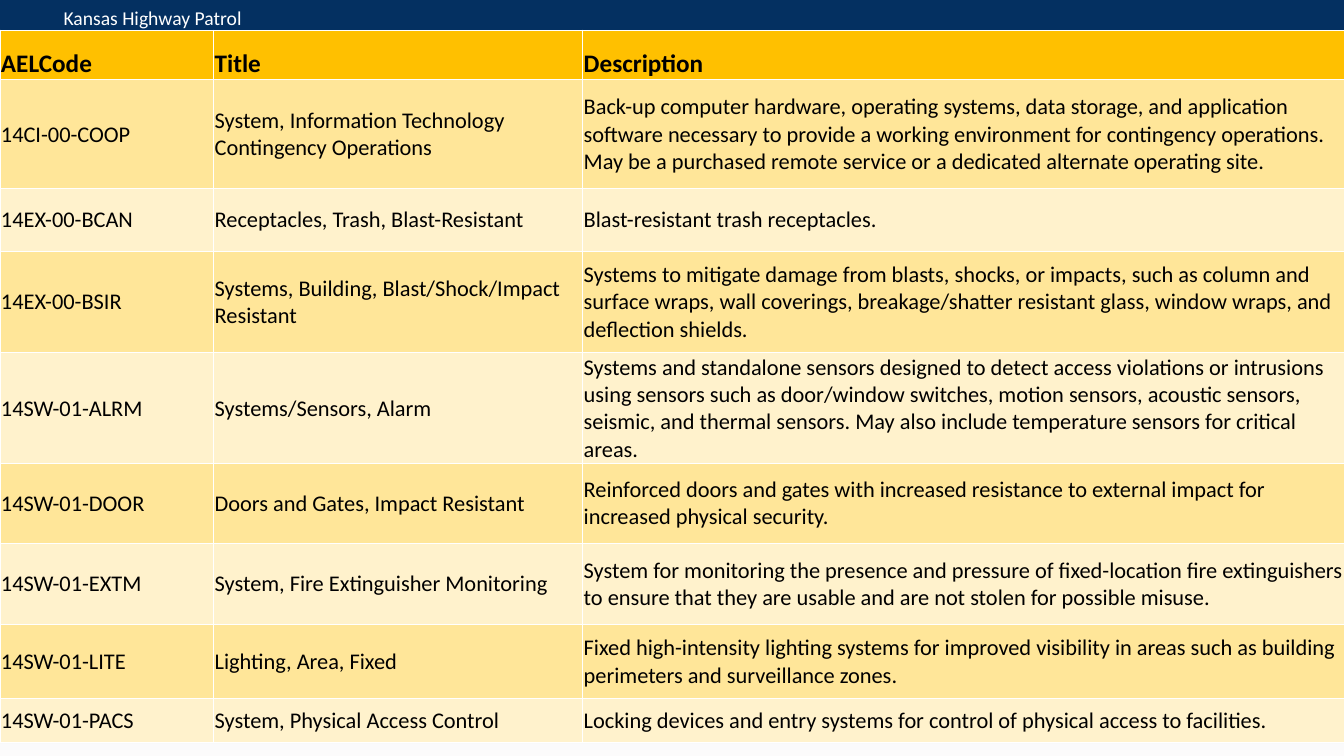
from lxml import etree
from pptx import Presentation
from pptx.dml.color import RGBColor
from pptx.enum.shapes import MSO_SHAPE
from pptx.enum.text import MSO_ANCHOR, PP_ALIGN
from pptx.oxml.ns import qn
from pptx.util import Inches, Pt

TITLE = "Kansas Highway Patrol"
ROWS = [
    (0.49, "AELCode", "Title", "Description"),
    (1.08, "14CI-00-COOP", "System, Information Technology Contingency Operations",
     "Back-up computer hardware, operating systems, data storage, and application software "
     "necessary to provide a working environment for contingency operations. May be a "
     "purchased remote service or a dedicated alternate operating site."),
    (0.62, "14EX-00-BCAN", "Receptacles, Trash, Blast-Resistant",
     "Blast-resistant trash receptacles."),
    (1.01, "14EX-00-BSIR", "Systems, Building, Blast/Shock/Impact Resistant",
     "Systems to mitigate damage from blasts, shocks, or impacts, such as column and surface "
     "wraps, wall coverings, breakage/shatter resistant glass, window wraps, and deflection "
     "shields."),
    (1.08, "14SW-01-ALRM", "Systems/Sensors, Alarm",
     "Systems and standalone sensors designed to detect access violations or intrusions using "
     "sensors such as door/window switches, motion sensors, acoustic sensors, seismic, and "
     "thermal sensors. May also include temperature sensors for critical areas."),
    (0.79, "14SW-01-DOOR", "Doors and Gates, Impact Resistant",
     "Reinforced doors and gates with increased resistance to external impact for increased "
     "physical security."),
    (0.81, "14SW-01-EXTM", "System, Fire Extinguisher Monitoring",
     "System for monitoring the presence and pressure of fixed-location fire extinguishers to "
     "ensure that they are usable and are not stolen for possible misuse."),
    (0.73, "14SW-01-LITE", "Lighting, Area, Fixed",
     "Fixed high-intensity lighting systems for improved visibility in areas such as building "
     "perimeters and surveillance zones."),
    (0.44, "14SW-01-PACS", "System, Physical Access Control",
     "Locking devices and entry systems for control of physical access to facilities."),
]
WIDTHS = [2.12, 3.66, 7.56]
STOPS = [(0, "EBF4FE"), (37, "FCFBFB"), (74, "B9D3EB"), (100, "FCFBFB")]

FONT = "Calibri"
NAVY = RGBColor(0x04, 0x30, 0x61)
GOLD = RGBColor(0xFF, 0xC0, 0x00)
AMBER = RGBColor(0xFF, 0xE6, 0x99)
CREAM = RGBColor(0xFF, 0xF2, 0xCC)
WHITE = RGBColor(0xFF, 0xFF, 0xFF)
BLACK = RGBColor(0, 0, 0)
RECT = MSO_SHAPE.RECTANGLE
MIDDLE, BOTTOM = MSO_ANCHOR.MIDDLE, MSO_ANCHOR.BOTTOM
LEFT = PP_ALIGN.LEFT


def style(frame, size, color, bold=False):
    para = frame.paragraphs[0]
    para.alignment = LEFT
    for run in para.runs:
        font = run.font
        font.name, font.size, font.bold = FONT, Pt(size), bold
        font.color.rgb = color


def add_color(parent, color):
    etree.SubElement(parent, qn("a:srgbClr"), val=str(color))


def set_back(slide):
    fill = slide.background.fill
    fill.gradient()
    fill.gradient_angle = 270
    stops = slide.element.xpath(".//a:gsLst")[0]
    for stop in list(stops):
        stops.remove(stop)
    for place, color in STOPS:
        add_color(etree.SubElement(stops, qn("a:gs"), pos=str(place * 1000)), color)


def add_head(slide):
    bar = slide.shapes.add_shape(RECT, Inches(-0.05), Inches(-0.03), Inches(13.38), Inches(0.45))
    bar.shadow.inherit = False
    bar.fill.solid()
    bar.fill.fore_color.rgb = NAVY
    bar.line.fill.background()
    title = slide.shapes.title
    title.left, title.top = Inches(0.53), Inches(0.01)
    title.width, title.height = Inches(5.77), Inches(0.34)
    title.text_frame.text = TITLE
    title.text_frame.vertical_anchor = MIDDLE
    title.text_frame.paragraphs[0].line_spacing = 1.0
    style(title.text_frame, 14, WHITE)
    title.element.addprevious(bar.element)


def add_edges(cell, sides):
    props = cell._tc.get_or_add_tcPr()
    for side in sides:
        line = etree.SubElement(props, qn("a:ln" + side), w=str(Pt(0.5)))
        add_color(etree.SubElement(line, qn("a:solidFill")), WHITE)


def add_grid(slide):
    high = sum(row[0] for row in ROWS)
    table = slide.shapes.add_table(len(ROWS), len(WIDTHS), 0, Inches(0.3),
                                   Inches(sum(WIDTHS)), Inches(high)).table
    for col, width in zip(table.columns, WIDTHS):
        col.width = Inches(width)
    for r, (height, *texts) in enumerate(ROWS):
        table.rows[r].height = Inches(height)
        head = r == 0
        for c, text in enumerate(texts):
            cell = table.cell(r, c)
            cell.text_frame.text = text
            style(cell.text_frame, 18 if head else 16, BLACK, head)
            cell.vertical_anchor = BOTTOM if head else MIDDLE
            cell.margin_left = cell.margin_right = cell.margin_top = Inches(0.01)
            cell.margin_bottom = 0
            add_edges(cell, ("L" if c else "") + "R" + ("" if head else "T") + "B")
            cell.fill.solid()
            cell.fill.fore_color.rgb = GOLD if head else AMBER if r % 2 else CREAM


def main():
    deck = Presentation()
    deck.slide_width, deck.slide_height = Inches(13.33), Inches(7.5)
    slide = deck.slides.add_slide(deck.slide_layouts[5])
    set_back(slide)
    add_head(slide)
    add_grid(slide)
    deck.save("out.pptx")


if __name__ == "__main__":
    main()
